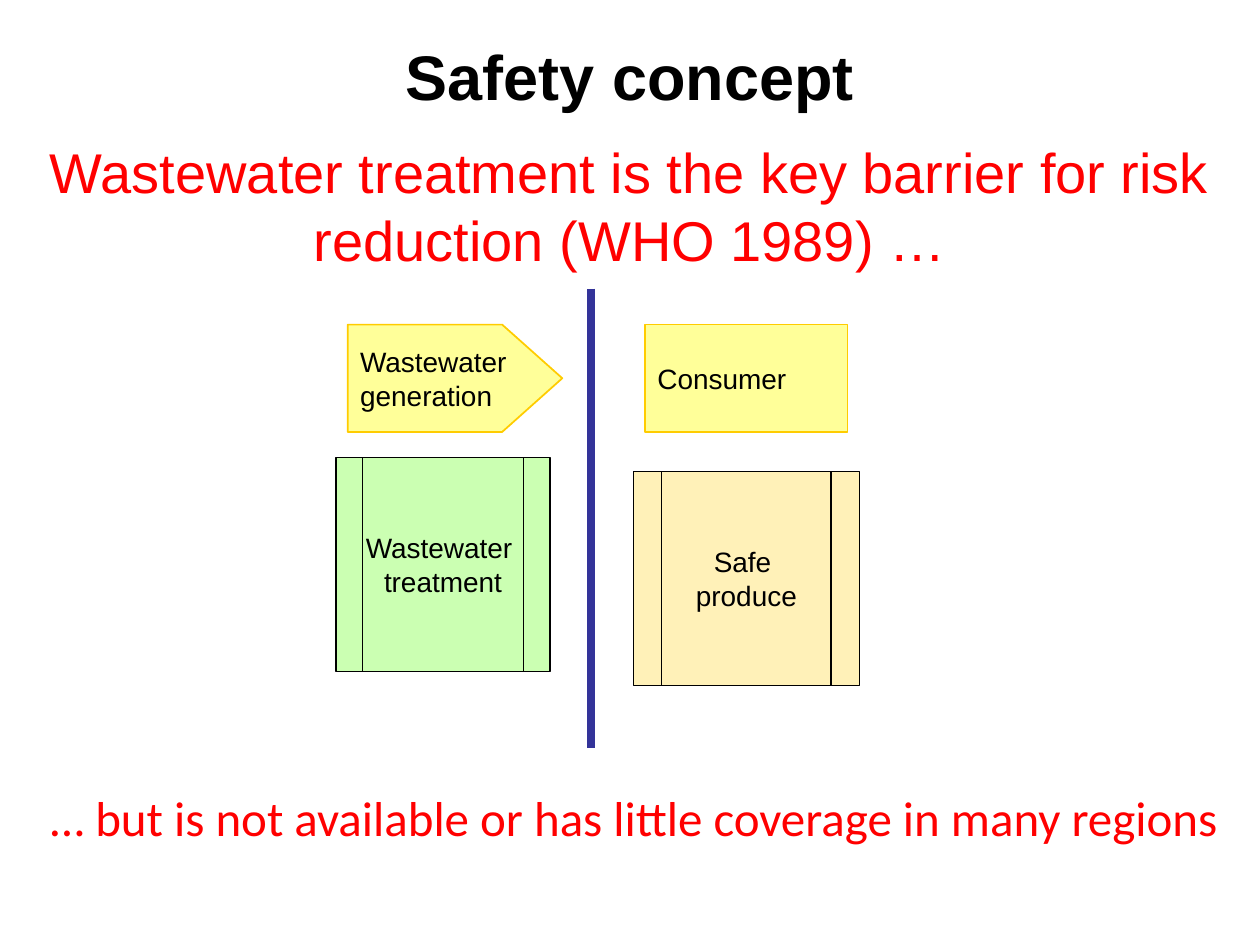
from lxml import etree
from pptx import Presentation
from pptx.dml.color import RGBColor
from pptx.enum import shapes, text
from pptx.oxml.ns import qn
from pptx.util import Pt

SHAPE, ALIGN = shapes.MSO_SHAPE, text.PP_ALIGN
BLACK, RED, NAVY = "000000", "FF0000", "333399"
YELLOW, GOLD, GREEN, SAND = "FFFF99", "FFCC00", "99FF66", "FFE473"

HEADINGS = [  # text, size, colour, bold, space before
    ("Safety concept", 36, BLACK, True, 0),
    ("Wastewater treatment is the key barrier for risk reduction (WHO 1989) …",
     32, RED, False, 14),
]
CLOSING = "… but is not available or has little coverage in many regions"
BARRIER = (337.5, 165, 427.5)  # x, top, bottom
BOXES = [  # preset, place, lines, alignment, fill, opacity, line, line width
    (SHAPE.PENTAGON, (198.7, 185.5, 122.6, 61.3), ["Wastewater ", "generation"],
     ALIGN.LEFT, YELLOW, 100, GOLD, 1),
    (SHAPE.RECTANGLE, (368.6, 185.5, 115.8, 61.3), ["Consumer"],
     ALIGN.LEFT, YELLOW, 100, GOLD, 1),
    (SHAPE.FLOWCHART_PREDEFINED_PROCESS, (192, 261.4, 122.4, 122.2),
     ["Wastewater ", "treatment"], ALIGN.CENTER, GREEN, 50, BLACK, 0.75),
    (SHAPE.FLOWCHART_PREDEFINED_PROCESS, (362, 269.3, 129, 122.4),
     ["Safe ", "produce"], ALIGN.CENTER, SAND, 50, BLACK, 0.75),
]


def rgb(code):
    return RGBColor.from_string(code)


def add_run(p, words, font, size, colour, bold=False):
    r = p.add_run()
    r.text = words
    r.font.name, r.font.size, r.font.bold = font, Pt(size), bold
    r.font.color.rgb = rgb(colour)


def add_box(s, preset, place, lines, align, fill, opacity, line, width,
            font="Arial", size=16, colour=BLACK):
    """Add a filled shape with one unwrapped, vertically centred paragraph."""
    sp = s.shapes.add_shape(preset, *map(Pt, place))
    sp.shadow.inherit = False
    sp.fill.solid()
    sp.fill.fore_color.rgb = rgb(fill)
    if opacity < 100:
        clr = sp.fill._xPr.find(".//" + qn("a:srgbClr"))
        etree.SubElement(clr, qn("a:alpha"), val=str(opacity * 1000))
    if line:
        sp.line.color.rgb = rgb(line)
        sp.line.width = Pt(width)
    else:
        sp.line.fill.background()
    tf = sp.text_frame
    tf.word_wrap = False
    tf.vertical_anchor = text.MSO_ANCHOR.MIDDLE
    p = tf.paragraphs[0]
    p.alignment = align
    for i, words in enumerate(lines):
        if i:
            p.add_line_break()
        add_run(p, words, font, size, colour)
    return sp


def add_barrier(s, x, top, bottom):
    line = s.shapes.add_connector(shapes.MSO_CONNECTOR.STRAIGHT,
                                  Pt(x), Pt(top), Pt(x), Pt(bottom))
    line.line.color.rgb = rgb(NAVY)
    line.line.width = Pt(4.5)
    etree.SubElement(line._element.spPr, qn("a:effectLst"))


def add_headings(s):
    title = s.shapes.title
    title.left, title.top, title.width, title.height = map(Pt, (18, 18, 684, 143.3))
    tf = title.text_frame
    tf.word_wrap = True
    tf.auto_size = text.MSO_AUTO_SIZE.NONE
    tf.vertical_anchor = text.MSO_ANCHOR.TOP
    for i, (words, size, colour, bold, gap) in enumerate(HEADINGS):
        p = tf.add_paragraph() if i else tf.paragraphs[0]
        p.alignment = ALIGN.CENTER
        p.space_before = Pt(gap)
        add_run(p, words, "Arial", size, colour, bold)


def main():
    prs = Presentation()
    prs.slide_width, prs.slide_height = Pt(720), Pt(540)
    s = prs.slides.add_slide(prs.slide_layouts[5])
    add_headings(s)
    add_box(s, SHAPE.RECTANGLE, (35.3, 427.7, 653.8, 77.8), [CLOSING], ALIGN.CENTER,
            "FFFFFF", 100, None, 0, font="Calibri", size=28, colour=RED)
    add_barrier(s, *BARRIER)
    for box in BOXES:
        sp = add_box(s, *box)
        if box[0] == SHAPE.PENTAGON:
            sp.adjustments[0] = 0.56
    prs.save("out.pptx")


if __name__ == "__main__":
    main()
